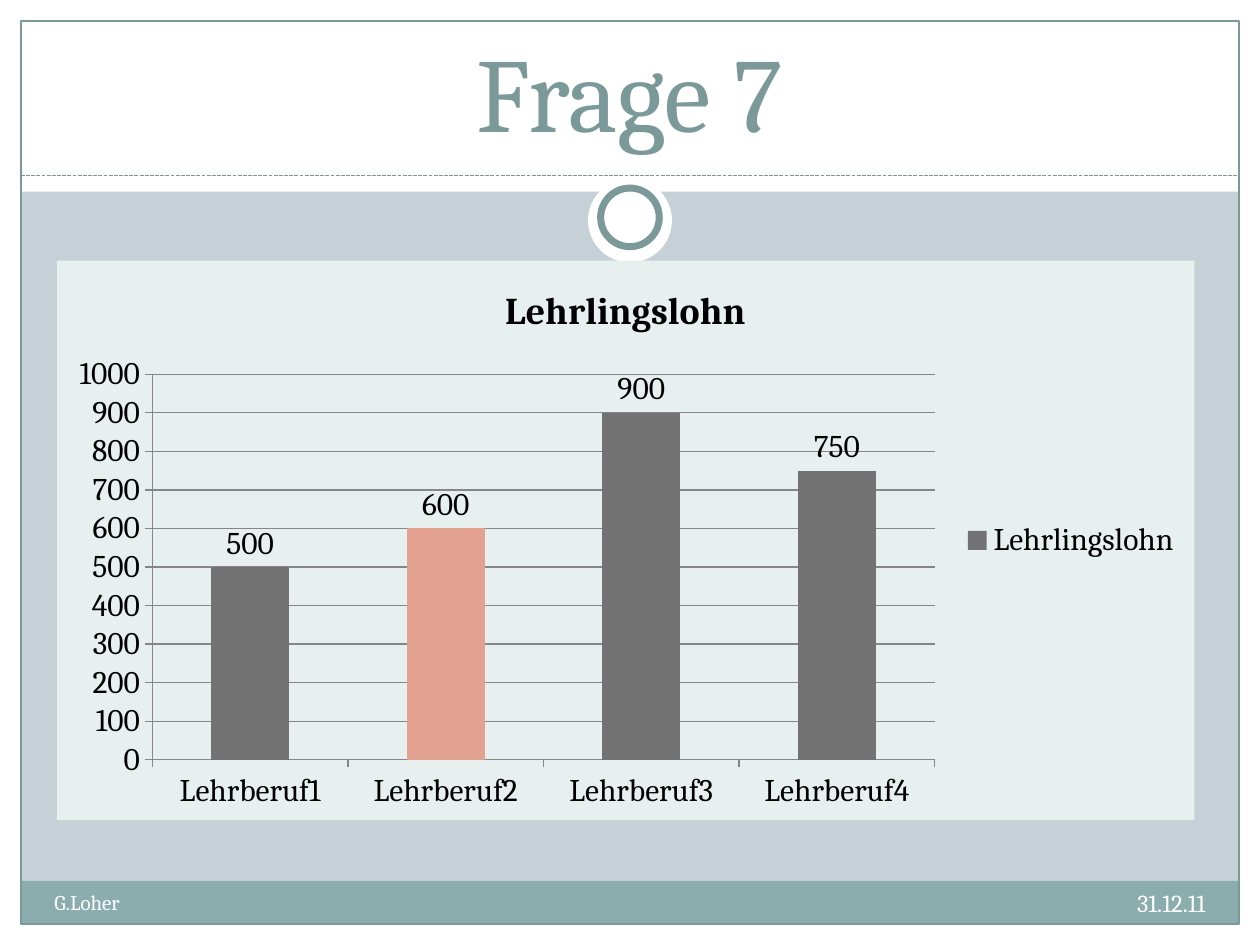
from lxml import etree
from pptx import Presentation
from pptx.chart.data import CategoryChartData
from pptx.dml.color import RGBColor
from pptx.enum.chart import XL_CHART_TYPE, XL_LABEL_POSITION, XL_LEGEND_POSITION, XL_TICK_MARK
from pptx.enum.dml import MSO_LINE
from pptx.enum.shapes import MSO_CONNECTOR, MSO_SHAPE
from pptx.enum.text import MSO_ANCHOR, PP_ALIGN
from pptx.oxml import parse_xml
from pptx.oxml.ns import nsdecls, qn
from pptx.util import Pt

BACKDROP = RGBColor(0xC5, 0xD1, 0xD7)
WHITE = RGBColor(0xFF, 0xFF, 0xFF)
BLACK = RGBColor(0, 0, 0)
TEAL = RGBColor(0x7C, 0x99, 0x9A)
BAND = RGBColor(0x8C, 0xAD, 0xAE)
PANEL = RGBColor(0xE8, 0xEF, 0xEF)
BAR = RGBColor(0x72, 0x72, 0x72)
HIGHLIGHT = RGBColor(0xE3, 0xA1, 0x92)
GRID = RGBColor(0x86, 0x86, 0x86)
FONT = "Cambria"

WIDTH, HEIGHT, MARGIN = 720, 540, 12


def add_figure(slide, box, kind=MSO_SHAPE.RECTANGLE, fill=None, line=None, weight=0.75):
    figure = slide.shapes.add_shape(kind, *map(Pt, box))
    figure.shadow.inherit = False
    if fill is None:
        figure.fill.background()
    else:
        figure.fill.solid()
        figure.fill.fore_color.rgb = fill
    if line is None:
        figure.line.fill.background()
    else:
        figure.line.color.rgb = line
        figure.line.width = Pt(weight)


def add_text(slide, box, text, size, color=WHITE, align=PP_ALIGN.LEFT, anchor=MSO_ANCHOR.TOP):
    frame = slide.shapes.add_textbox(*map(Pt, box)).text_frame
    frame.word_wrap = True
    frame.vertical_anchor = anchor
    paragraph = frame.paragraphs[0]
    paragraph.alignment = align
    run = paragraph.add_run()
    run.text = text
    set_font(run.font, size, color)


def set_font(font, size, color, bold=False):
    font.name, font.size, font.bold = FONT, Pt(size), bold
    font.color.rgb = color


def add_frame(slide, box):
    """White border, header, footer band and outline of the slide."""
    left, top, width, height = box
    inner = (left + MARGIN, top + MARGIN, width - 2 * MARGIN, height - 2 * MARGIN)
    right, bottom = left + width - MARGIN, top + height - MARGIN
    for border in (
        (left, bottom, width, MARGIN),
        (left, top, width, 109.5),
        (left, top, MARGIN, height),
        (right, top, MARGIN, height),
    ):
        add_figure(slide, border, fill=WHITE)
    add_figure(slide, (inner[0], bottom - 24.7, inner[2], 24.7), fill=BAND)
    add_figure(slide, inner, line=TEAL)


def add_header(slide, box):
    """Title, dashed rule and centred ring."""
    left, top, width, height = box
    add_text(slide, (left + 12, top, width - 24, 73.5), "Frage 7", 60, color=TEAL,
             align=PP_ALIGN.CENTER, anchor=MSO_ANCHOR.BOTTOM)
    rule_y = top + height
    rule = slide.shapes.add_connector(
        MSO_CONNECTOR.STRAIGHT, Pt(left), Pt(rule_y), Pt(left + width), Pt(rule_y))
    rule.line.color.rgb = TEAL
    rule.line.width = Pt(0.75)
    rule.line.dash_style = MSO_LINE.SQUARE_DOT
    etree.SubElement(rule.element.spPr, qn("a:effectLst"))

    center = left + width / 2
    for offset, diameter, outline in ((1.5, 48, None), (7, 33.5, TEAL)):
        add_figure(slide, (center - diameter / 2, rule_y + offset, diameter, diameter),
                   kind=MSO_SHAPE.OVAL, fill=WHITE, line=outline, weight=4)


def add_footer(slide, box):
    """Author on the left, date on the right."""
    left, top, width, height = box
    add_text(slide, (left + width - 240, top, 240, height), "31.12.11", 14, align=PP_ALIGN.RIGHT)
    add_text(slide, (left, top + 0.5, 282, height), "G.Loher", 12)


def add_wage_chart(slide, box):
    wages = CategoryChartData()
    wages.categories = [f"Lehrberuf{number}" for number in range(1, 5)]
    wages.add_series("Lehrlingslohn", (500, 600, 900, 750))
    chart = slide.shapes.add_chart(
        XL_CHART_TYPE.COLUMN_CLUSTERED, *map(Pt, box), wages).chart
    set_font(chart.font, 18, BLACK)

    # Title and legend
    chart.has_title = True
    title = chart.chart_title.text_frame
    title.text = "Lehrlingslohn"
    set_font(title.paragraphs[0].runs[0].font, 21.6, BLACK, bold=True)
    chart.has_legend = True
    chart.legend.position = XL_LEGEND_POSITION.RIGHT
    chart.legend.include_in_layout = False

    # Axes
    values = chart.value_axis
    values.minimum_scale, values.maximum_scale, values.major_unit = 0, 1000, 100
    values.has_major_gridlines = True
    for axis in (chart.category_axis, values):
        axis.major_tick_mark = XL_TICK_MARK.OUTSIDE
        axis.format.line.color.rgb = GRID
    values.major_gridlines.format.line.color.rgb = GRID

    # Bars, with the second one highlighted
    plot = chart.plots[0]
    plot.gap_width = 150
    plot.vary_by_categories = False
    bars = plot.series[0]
    bars.invert_if_negative = False
    for target, color in ((bars, BAR), (bars.points[1], HIGHLIGHT)):
        target.format.fill.solid()
        target.format.fill.fore_color.rgb = color
    labels = bars.data_labels
    labels.show_value = True
    labels.position = XL_LABEL_POSITION.OUTSIDE_END

    # Chart background
    chart.element.find(qn("c:chart")).addnext(parse_xml(
        f'<c:spPr {nsdecls("c", "a")}><a:solidFill><a:srgbClr val="{PANEL}"/></a:solidFill>'
        "<a:ln><a:noFill/></a:ln></c:spPr>"))


def main():
    presentation = Presentation()
    presentation.slide_width, presentation.slide_height = Pt(WIDTH), Pt(HEIGHT)
    slide = presentation.slides.add_slide(presentation.slide_layouts[6])
    slide.background.fill.solid()
    slide.background.fill.fore_color.rgb = BACKDROP

    add_frame(slide, (0, 0, WIDTH, HEIGHT))
    add_header(slide, (MARGIN, 18, WIDTH - 2 * MARGIN, 82.5))
    add_footer(slide, (24, 504, WIDTH - 48, 28.8))
    add_wage_chart(slide, (32.5, 149, 650, 319.7))
    presentation.save("out.pptx")


if __name__ == "__main__":
    main()
